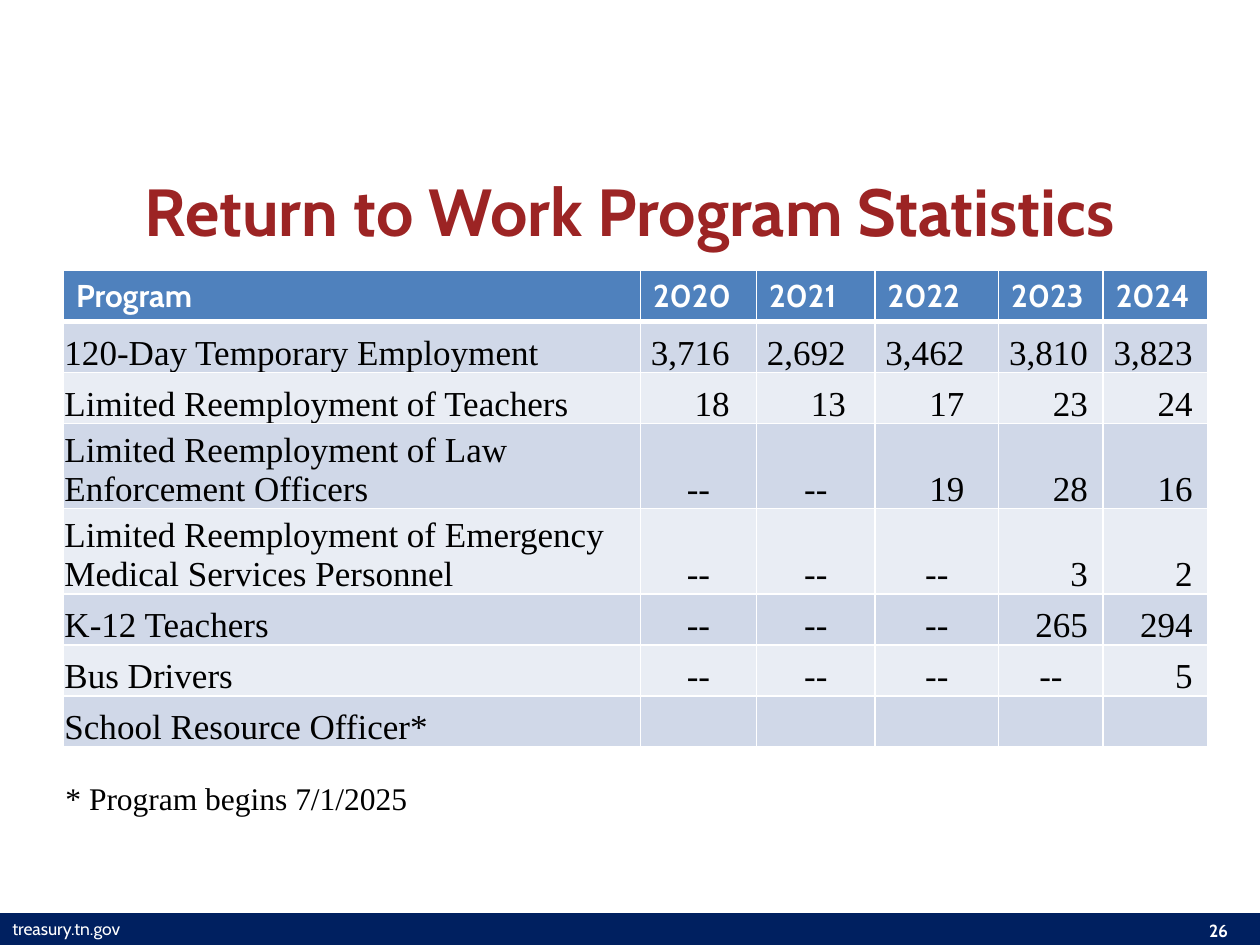
from dataclasses import dataclass

from lxml.etree import SubElement
from pptx import Presentation
from pptx.dml.color import RGBColor
from pptx.enum.shapes import MSO_SHAPE
from pptx.enum.text import MSO_ANCHOR, PP_ALIGN
from pptx.oxml.ns import qn
from pptx.util import Cm, Pt

WHITE, BLACK, NAVY, RED = "FFFFFF", "000000", "002060", "9C2424"
HEADER_FILL, BAND_FILLS = "4F81BD", ("D0D8E8", "E9EDF4")
COLUMN_WIDTHS = (11.63, 2.34, 2.39, 2.49, 2.11, 2.11)
ROW_HEIGHT = 1.03
NUMBER_EDGE = 1.8
THIN_MARGIN = 0.02
YEARS = ("Program", "2020", "2021", "2022", "2023", "2024")
PROGRAMS = (
    ("120-Day Temporary Employment", "3,716", "2,692", "3,462", "3,810", "3,823"),
    ("Limited Reemployment of Teachers", "18", "13", "17", "23", "24"),
    ("Limited Reemployment of Law Enforcement Officers", "--", "--", "19", "28", "16"),
    ("Limited Reemployment of Emergency Medical Services Personnel",
     "--", "--", "--", "3", "2"),
    ("K-12 Teachers", "--", "--", "--", "265", "294"),
    ("Bus Drivers", "--", "--", "--", "--", "5"),
    ("School Resource Officer*", "", "", "", "", ""),
)


@dataclass(frozen=True)
class Style:
    font: str
    size: float
    color: str
    bold: bool = False
    align: PP_ALIGN = PP_ALIGN.LEFT


@dataclass(frozen=True)
class Label:
    text: str
    left: float
    top: float
    width: float
    height: float
    style: Style
    anchor: MSO_ANCHOR = MSO_ANCHOR.TOP


HEADER_STYLE = Style("Cabin", 18, WHITE, True)
BODY_STYLE = Style("Times New Roman", 20, BLACK)
LABELS = (
    Label("treasury.tn.gov", 0, 18.39, 4.65, 0.68, Style("Cabin", 10, WHITE)),
    Label("26", 23.93, 18.42, 1.27, 0.68,
          Style("Cabin", 10, WHITE, True, PP_ALIGN.CENTER)),
    Label("Return to Work Program Statistics", 1.27, 2.97, 22.86, 2.54,
          Style("Cabin", 38, RED, True, PP_ALIGN.CENTER), MSO_ANCHOR.MIDDLE),
    Label("* Program begins 7/1/2025", 1.07, 15.57, 11.23, 1.02,
          Style("Times New Roman", 18, BLACK)),
)


def rgb(value: str) -> RGBColor:
    return RGBColor.from_string(value)


def write(frame, text: str, style: Style) -> None:
    para = frame.paragraphs[0]
    para.text = text
    para.alignment = style.align
    para.font.name = style.font
    para.font.size = Pt(style.size)
    para.font.bold = style.bold
    para.font.color.rgb = rgb(style.color)


def draw_label(page, label: Label) -> None:
    box = page.shapes.add_textbox(
        Cm(label.left), Cm(label.top), Cm(label.width), Cm(label.height))
    box.text_frame.word_wrap = True
    box.text_frame.vertical_anchor = label.anchor
    write(box.text_frame, label.text, label.style)


def draw_footer_band(page) -> None:
    band = page.shapes.add_shape(
        MSO_SHAPE.RECTANGLE, Cm(-0.41), Cm(18.41), Cm(26.04), Cm(0.64))
    band.shadow.inherit = False
    band.fill.solid()
    band.fill.fore_color.rgb = rgb(NAVY)
    band.line.fill.background()


def format_cell(cell, fill: str, top: float, bottom: float) -> None:
    properties = cell._tc.get_or_add_tcPr()
    for side, points in (("L", 1), ("R", 1), ("T", top), ("B", bottom)):
        line = SubElement(properties, qn(f"a:ln{side}"), w=str(Pt(points)))
        solid = SubElement(line, qn("a:solidFill"))
        SubElement(solid, qn("a:srgbClr"), val=WHITE)
    cell.fill.solid()
    cell.fill.fore_color.rgb = rgb(fill)


def fill_body_cell(cell, text: str, column: int) -> None:
    """Align numbers to one edge measured from the left of each column."""
    cell.vertical_anchor = MSO_ANCHOR.BOTTOM
    cell.margin_left = cell.margin_right = cell.margin_top = Cm(THIN_MARGIN)
    cell.margin_bottom = 0
    align = PP_ALIGN.LEFT
    if text == "--":
        align = PP_ALIGN.CENTER
    elif column:
        align = PP_ALIGN.RIGHT
        cell.margin_right = Cm(COLUMN_WIDTHS[column] - NUMBER_EDGE)
    style = Style(BODY_STYLE.font, BODY_STYLE.size, BODY_STYLE.color, align=align)
    write(cell.text_frame, text, style)


def draw_table(page) -> None:
    row_count = len(PROGRAMS) + 1
    table = page.shapes.add_table(
        row_count, len(YEARS), Cm(1.28), Cm(5.45),
        Cm(sum(COLUMN_WIDTHS)), Cm(ROW_HEIGHT * row_count)).table
    for column, width in zip(table.columns, COLUMN_WIDTHS):
        column.width = Cm(width)
    for row in table.rows:
        row.height = Cm(ROW_HEIGHT)
    for column, year in enumerate(YEARS):
        cell = table.cell(0, column)
        format_cell(cell, HEADER_FILL, 1, 3)
        write(cell.text_frame, year, HEADER_STYLE)
    for row, program in enumerate(PROGRAMS, start=1):
        for column, text in enumerate(program):
            cell = table.cell(row, column)
            format_cell(cell, BAND_FILLS[(row - 1) % 2], 3 if row == 1 else 1, 1)
            fill_body_cell(cell, text, column)


def main() -> None:
    deck = Presentation()
    deck.slide_width, deck.slide_height = Cm(25.4), Cm(19.05)
    page = deck.slides.add_slide(deck.slide_layouts[6])
    draw_footer_band(page)
    for label in LABELS:
        draw_label(page, label)
    draw_table(page)
    deck.save("out.pptx")


if __name__ == "__main__":
    main()
